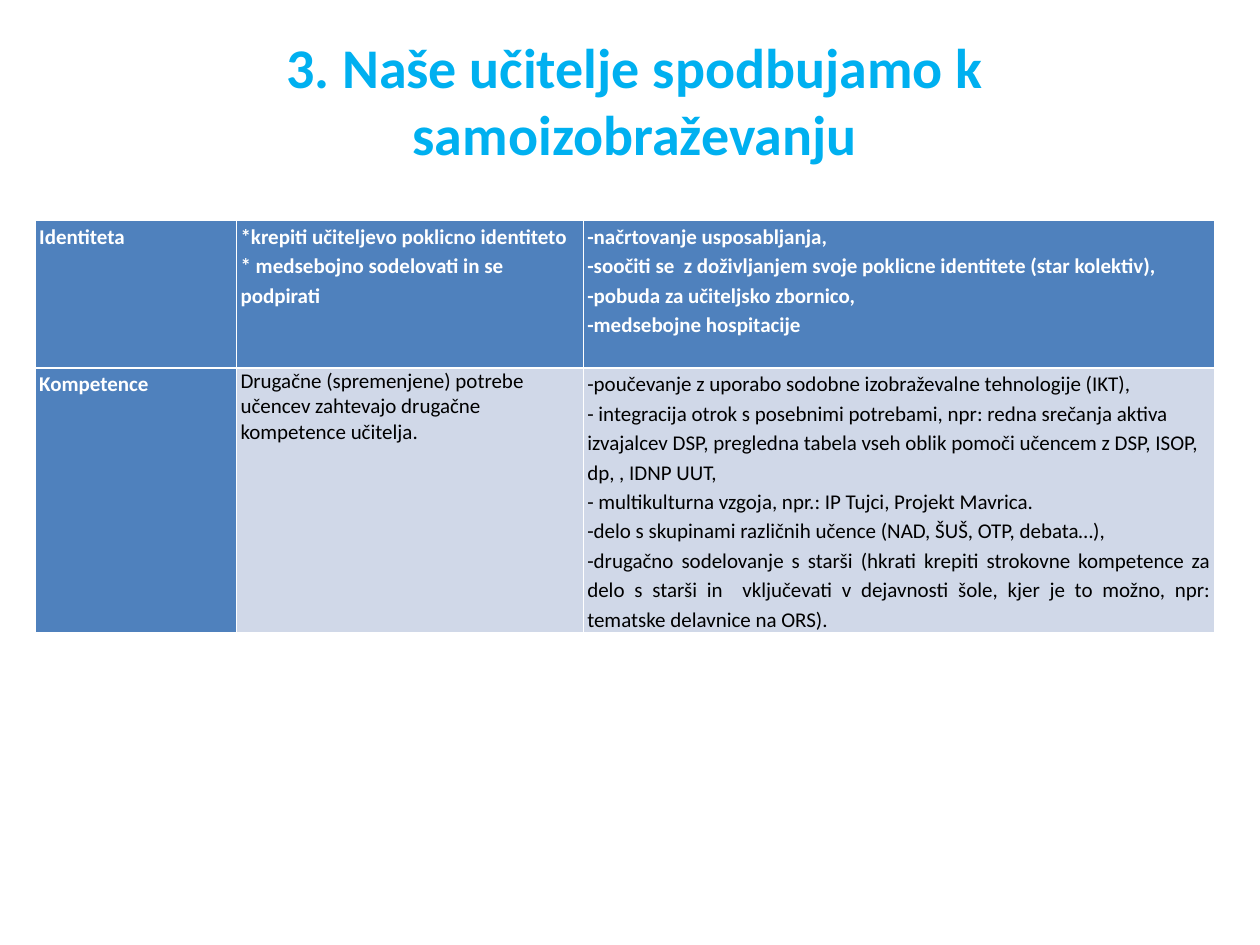
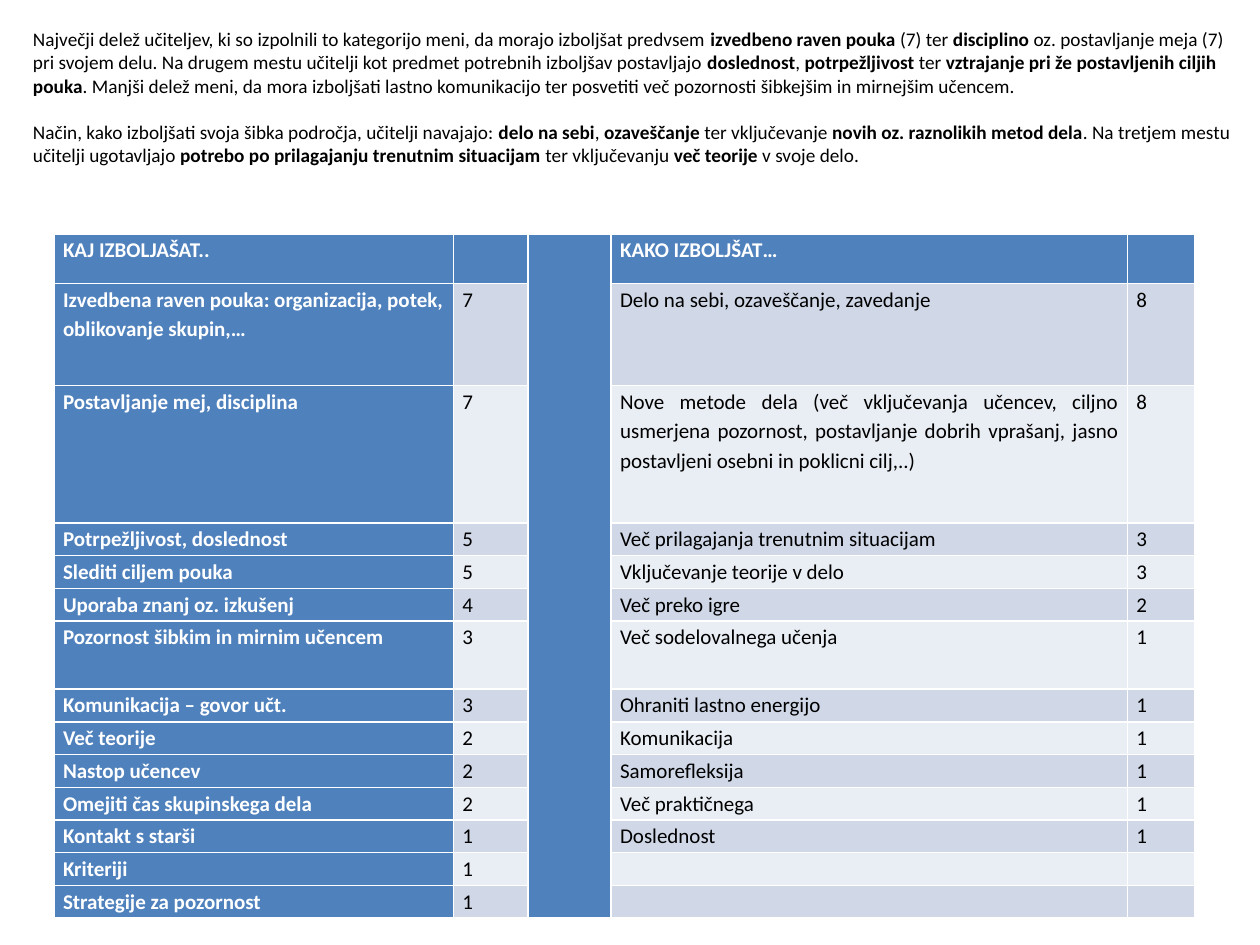
"""Build two slides on how teachers learn and what they want to improve."""
from dataclasses import dataclass
from typing import NamedTuple

from lxml.etree import SubElement as sub_node
from pptx import Presentation as Deck
from pptx.dml.color import RGBColor as Rgb
from pptx.enum.text import MSO_ANCHOR as Anchor, MSO_AUTO_SIZE as Fit, PP_ALIGN as Align
from pptx.oxml.ns import qn
from pptx.slide import Slide
from pptx.util import Cm, Pt


@dataclass(frozen=True)
class Theme:
    font: str = "Calibri"
    title: Rgb = Rgb(0x00, 0xB0, 0xF0)
    head: Rgb = Rgb(0x4F, 0x81, 0xBD)
    odd: Rgb = Rgb(0xD0, 0xD8, 0xE8)
    even: Rgb = Rgb(0xE9, 0xED, 0xF4)
    light: Rgb = Rgb(0xFF, 0xFF, 0xFF)
    dark: Rgb = Rgb(0x00, 0x00, 0x00)
    big: float = 32
    small: float = 11
    cell: float = 12
    lines: float = 1.15


THEME = Theme()


class Box(NamedTuple):
    left: float
    top: float
    width: float
    height: float


class Run(NamedTuple):
    text: str
    bold: bool = False


class Par(NamedTuple):
    text: str
    align: Align = Align.JUSTIFY
    lines: float = THEME.lines


@dataclass(frozen=True)
class Grid:
    left: float
    top: float
    inset: float
    cols: list[float]
    rows: list[float]
    cells: list[list[list[Par]]]


def left(text: str, lines: float = THEME.lines) -> Par:
    return Par(text, Align.LEFT, lines)


def plain(*texts: str) -> list[Par]:
    return [Par(text) for text in texts]


def mix(*texts: str) -> list[Run]:
    return [Run(text, bool(i % 2)) for i, text in enumerate(texts)]


def add_run(par, run: Run, size: float, color: Rgb) -> None:
    part = par.add_run()
    part.text = run.text
    font = part.font
    font.name, font.size, font.bold = THEME.font, Pt(size), run.bold
    font.color.rgb = color


def add_title(slide: Slide, box: Box, pars: list[list[Run]], size: float, color: Rgb,
              align: Align, anchor: Anchor, gap: float = 0, base: float = 0.13) -> None:
    shape = slide.shapes.title
    shape.left, shape.top, shape.width, shape.height = map(Cm, box)
    frame = shape.text_frame
    frame.word_wrap, frame.auto_size = True, Fit.NONE
    frame.vertical_anchor, frame.margin_bottom = anchor, Cm(base)
    for i, runs in enumerate(pars):
        par = frame.add_paragraph() if i else frame.paragraphs[0]
        par.alignment = align
        par.space_before = Pt(gap if i else 0)
        for run in runs:
            add_run(par, run, size, color)


def fill_cell(cell, pars: list[Par], inset: float, back: Rgb) -> None:
    cell.fill.solid()
    cell.fill.fore_color.rgb = back
    cell.margin_left = cell.margin_right = Cm(inset)
    cell.margin_top = cell.margin_bottom = 0
    head = back == THEME.head
    frame = cell.text_frame
    if not pars:
        sub_node(frame.paragraphs[0]._p, qn("a:endParaRPr"), sz=str(int(THEME.cell * 100)))
    for i, item in enumerate(pars):
        par = frame.add_paragraph() if i else frame.paragraphs[0]
        par.alignment, par.line_spacing = item.align, item.lines
        add_run(par, Run(item.text, head), THEME.cell, THEME.light if head else THEME.dark)


def add_grid(slide: Slide, grid: Grid):
    frame = slide.shapes.add_table(len(grid.rows), len(grid.cols), Cm(grid.left), Cm(grid.top),
                                   Cm(sum(grid.cols)), Cm(sum(grid.rows)))
    table = frame.table
    table.first_col = True
    for col, width in zip(table.columns, grid.cols):
        col.width = Cm(width)
    for row, height in zip(table.rows, grid.rows):
        row.height = Cm(height)
    for r, line in enumerate(grid.cells):
        band = THEME.odd if r % 2 else THEME.even
        for c, pars in enumerate(line):
            back = band if r and c else THEME.head
            fill_cell(table.cell(r, c), pars, grid.inset, back)
    return table


def pair(what: Par, many: str, how: str, times: str) -> list[list[Par]]:
    texts = [plain(text) if text else [] for text in (many, "", how, times)]
    return [[what], *texts]


GOALS = Grid(0.71, 4.45, 0.08, [4.06, 6.99, 12.73], [2.97, 5.33], [
    [
        plain("Identiteta"),
        [left("*krepiti učiteljevo poklicno identiteto"),
         left("* medsebojno sodelovati in se podpirati")],
        plain("-načrtovanje usposabljanja,",
              "-soočiti se  z doživljanjem svoje poklicne identitete (star kolektiv),",
              "-pobuda za učiteljsko zbornico,",
              "-medsebojne hospitacije"),
    ],
    [
        plain("Kompetence"),
        [left("Drugačne (spremenjene) potrebe učencev zahtevajo drugačne kompetence učitelja.", 1.0)],
        [left("-poučevanje z uporabo sodobne izobraževalne tehnologije (IKT),"),
         left("- integracija otrok s posebnimi potrebami, npr: redna srečanja aktiva izvajalcev DSP, "
              "pregledna tabela vseh oblik pomoči učencem z DSP, ISOP, dp, , IDNP UUT,"),
         left("- multikulturna vzgoja, npr.: IP Tujci, Projekt Mavrica."),
         left("-delo s skupinami različnih učence (NAD, ŠUŠ, OTP, debata…),"),
         Par("-drugačno sodelovanje s starši (hkrati krepiti strokovne kompetence za delo s starši "
             "in  vključevati v dejavnosti šole, kjer je to možno, npr: tematske delavnice na ORS).")],
    ],
])

NEEDS = Grid(1.09, 4.72, 0.18, [8.05, 1.5, 1.68, 10.41, 1.35],
             [0.99, 2.06, 2.77] + [0.66] * 3 + [1.37] + [0.66] * 7, [
    pair(Par("KAJ IZBOLJAŠAT.."), "", "KAKO IZBOLJŠAT…", ""),
    pair(left("Izvedbena raven pouka: organizacija, potek, oblikovanje skupin,…"), "7",
         "Delo na sebi, ozaveščanje, zavedanje", "8"),
    pair(left("Postavljanje mej, disciplina"), "7",
         "Nove metode dela (več vključevanja učencev, ciljno usmerjena pozornost, "
         "postavljanje dobrih vprašanj, jasno postavljeni osebni in poklicni cilj,..)", "8"),
    pair(Par("Potrpežljivost, doslednost"), "5", "Več prilagajanja trenutnim situacijam", "3"),
    pair(Par("Slediti ciljem pouka"), "5", "Vključevanje teorije v delo", "3"),
    pair(Par("Uporaba znanj oz. izkušenj"), "4", "Več preko igre", "2"),
    pair(Par("Pozornost šibkim in mirnim učencem"), "3", "Več sodelovalnega učenja", "1"),
    pair(Par("Komunikacija – govor učt."), "3", "Ohraniti lastno energijo", "1"),
    pair(Par("Več teorije"), "2", "Komunikacija", "1"),
    pair(Par("Nastop učencev"), "2", "Samorefleksija", "1"),
    pair(Par("Omejiti čas skupinskega dela"), "2", "Več praktičnega", "1"),
    pair(Par("Kontakt s starši"), "1", "Doslednost", "1"),
    pair(Par("Kriteriji"), "1", "", ""),
    pair(Par("Strategije za pozornost"), "1", "", ""),
])

INTRO = [
    mix("Največji delež učiteljev, ki so izpolnili to kategorijo meni, da morajo izboljšat predvsem ",
        "izvedbeno raven pouka", " (7) ter ", "disciplino",
        " oz. postavljanje meja (7) pri svojem delu. Na drugem mestu učitelji kot predmet "
        "potrebnih izboljšav postavljajo ",
        "doslednost", ", ", "potrpežljivost", " ter ", "vztrajanje pri že postavljenih ciljih pouka",
        ". Manjši delež meni, da mora izboljšati lastno komunikacijo ter posvetiti več pozornosti "
        "šibkejšim in mirnejšim učencem."),
    mix("Način, kako izboljšati svoja šibka področja, učitelji navajajo: ",
        "delo na sebi", ", ", "ozaveščanje", " ter vključevanje ", "novih oz. raznolikih metod dela",
        ". Na tretjem mestu učitelji ugotavljajo ", "potrebo po prilagajanju trenutnim situacijam",
        " ter vključevanju ", "več teorije", " v svoje delo."),
]


def main() -> None:
    deck = Deck()
    deck.slide_width, deck.slide_height = Cm(25.4), Cm(19.05)
    layout = deck.slide_layouts[5]

    slide = deck.slides.add_slide(layout)
    add_title(slide, Box(1.7, 0.53, 22.2, 3), [[Run("3. Naše učitelje spodbujamo k samoizobraževanju", True)]],
              THEME.big, THEME.title, Align.CENTER, Anchor.TOP)
    add_grid(slide, GOALS)

    slide = deck.slides.add_slide(layout)
    add_title(slide, Box(0.41, 0.33, 24.99, 4.19), INTRO, THEME.small, THEME.dark,
              Align.LEFT, Anchor.MIDDLE, gap=13.4, base=1.06)
    table = add_grid(slide, NEEDS)
    split = table.cell(0, 2)
    split.merge(table.cell(len(NEEDS.rows) - 1, 2))

    deck.save("out.pptx")


if __name__ == "__main__":
    main()
